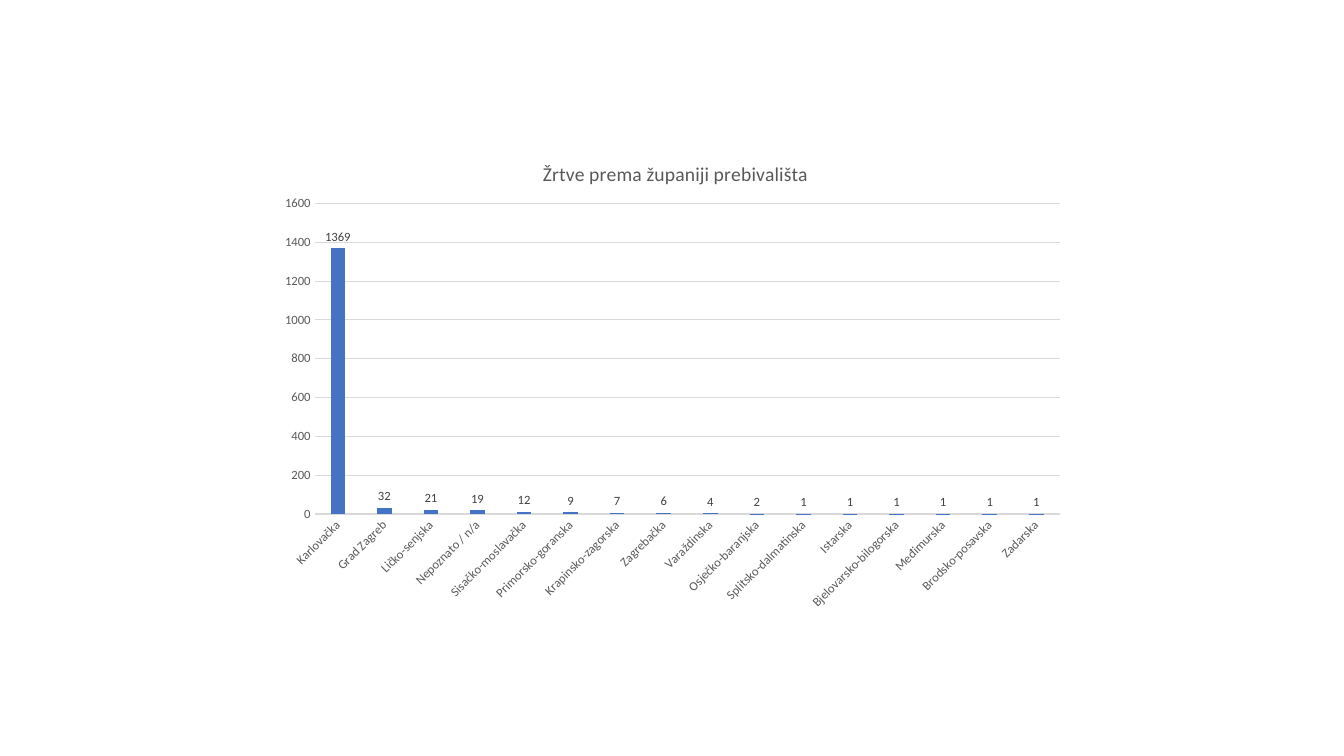
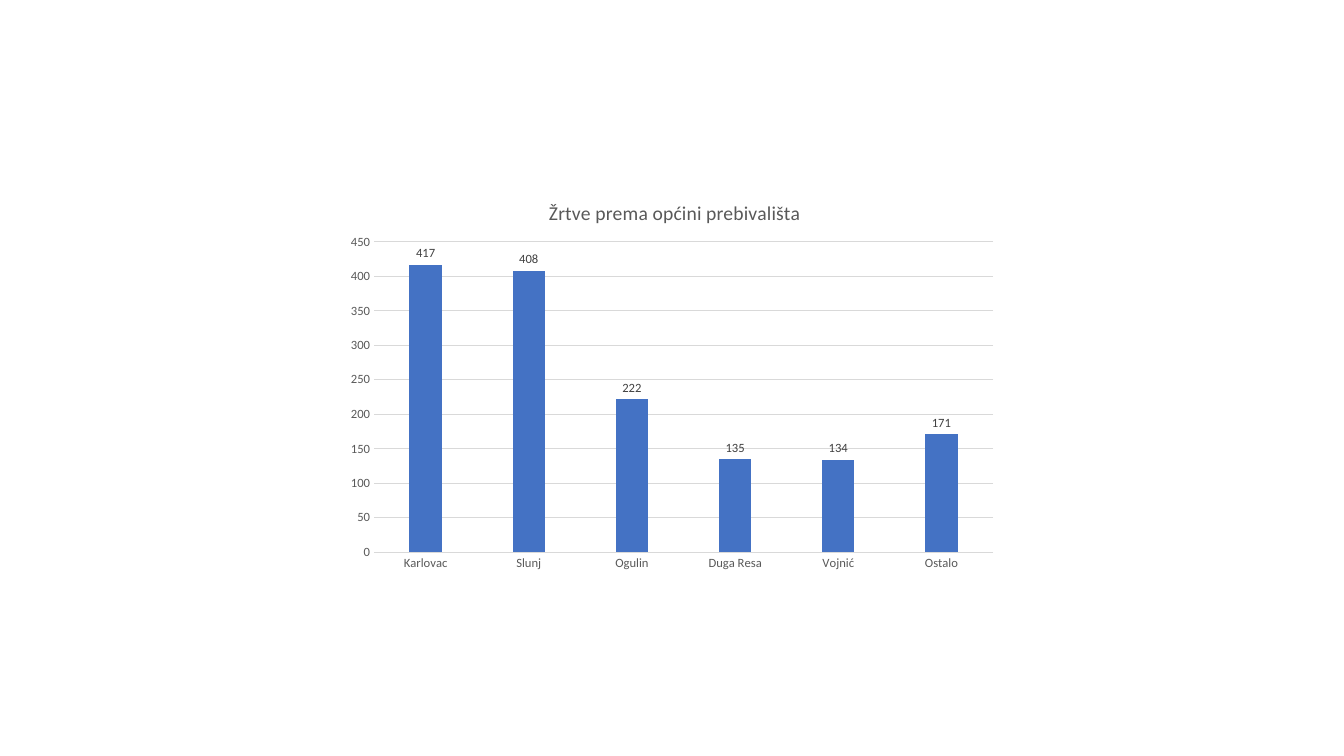
from lxml.etree import SubElement
from pptx import Presentation
from pptx.chart.data import CategoryChartData
from pptx.dml.color import RGBColor
from pptx.enum.chart import XL_CHART_TYPE, XL_LABEL_POSITION, XL_TICK_MARK
from pptx.oxml.ns import qn
from pptx.oxml.xmlchemy import OxmlElement
from pptx.util import Pt

PX = 9144  # EMU: 100 px to the inch
FONT = "Calibri"
BAR_BLUE = RGBColor(0x44, 0x72, 0xC4)
TEXT_GREY = RGBColor(0x59, 0x59, 0x59)
LABEL_GREY = RGBColor(0x40, 0x40, 0x40)
RULE_GREY = RGBColor(0xD9, 0xD9, 0xD9)

COUNTIES = {
    "Karlovačka": 1369,
    "Grad Zagreb": 32,
    "Ličko-senjska": 21,
    "Nepoznato / n/a": 19,
    "Sisačko-moslavačka": 12,
    "Primorsko-goranska": 9,
    "Krapinsko-zagorska": 7,
    "Zagrebačka": 6,
    "Varaždinska": 4,
    "Osječko-baranjska": 2,
    "Splitsko-dalmatinska": 1,
    "Istarska": 1,
    "Bjelovarsko-bilogorska": 1,
    "Međimurska": 1,
    "Brodsko-posavska": 1,
    "Zadarska": 1,
}
MUNICIPALITIES = {
    "Karlovac": 417,
    "Slunj": 408,
    "Ogulin": 222,
    "Duga Resa": 135,
    "Vojnić": 134,
    "Ostalo": 171,
}


def style_font(font, size, color):
    font.name = FONT
    font.size = Pt(size)
    font.bold = False
    font.color.rgb = color


def style_line(line):
    line.color.rgb = RULE_GREY
    line.width = Pt(0.75)


def manual_layout(frame, place, inner=False):
    """Layout element for a place (left, top[, width, height]) in slide px."""
    left, top, width, height = frame
    layout = OxmlElement("c:layout")
    manual = SubElement(layout, qn("c:manualLayout"))
    settings = [("layoutTarget", "inner")] if inner else []
    settings += [("xMode", "edge"), ("yMode", "edge")]
    fractions = [(place[0] - left) / width, (place[1] - top) / height]
    if inner:
        fractions += [place[2] / width, place[3] / height]
    settings += [(name, f"{value:.4f}") for name, value in zip("xywh", fractions)]
    for name, value in settings:
        SubElement(manual, qn(f"c:{name}")).set("val", value)
    return layout


def drop_layout(parent):
    for layout in parent.findall(qn("c:layout")):
        parent.remove(layout)


def add_title(chart, text, frame, place):
    title = chart.chart_title
    title.text_frame.text = text
    style_font(title.text_frame.paragraphs[0].font, 14, TEXT_GREY)
    element = title.element
    drop_layout(element)
    element.find(qn("c:tx")).addnext(manual_layout(frame, place))
    title.include_in_layout = False


def style_axes(chart, maximum, step, label_angle):
    for axis in (chart.category_axis, chart.value_axis):
        axis.major_tick_mark = axis.minor_tick_mark = XL_TICK_MARK.NONE
        style_font(axis.tick_labels.font, 9, TEXT_GREY)
    names, values = chart.category_axis, chart.value_axis
    style_line(names.format.line)
    body = names._element.xpath("c:txPr/a:bodyPr")[0]
    body.set("rot", str(label_angle * 60000))
    body.set("vert", "horz")
    values.minimum_scale, values.maximum_scale = 0, maximum
    values.major_unit = step
    values.format.line.fill.background()
    values.has_major_gridlines = True
    style_line(values.major_gridlines.format.line)


def style_bars(plot):
    plot.gap_width = 219
    plot.overlap = -27
    plot.vary_by_categories = False
    fill = plot.series[0].format.fill
    fill.solid()
    fill.fore_color.rgb = BAR_BLUE
    plot.has_data_labels = True
    labels = plot.data_labels
    labels.show_value = True
    labels.position = XL_LABEL_POSITION.OUTSIDE_END
    style_font(labels.font, 9, LABEL_GREY)


def add_column_slide(deck, title, counts, frame, title_at, plot_at,
                     maximum, step, label_angle=0):
    page = deck.slides.add_slide(deck.slide_layouts[6])
    data = CategoryChartData()
    data.categories = list(counts)
    data.add_series("Series 1", list(counts.values()))
    chart = page.shapes.add_chart(
        XL_CHART_TYPE.COLUMN_CLUSTERED, *(length * PX for length in frame), data
    ).chart
    chart.has_legend = False
    chart.font.name = FONT
    chart.font.size = Pt(10)
    add_title(chart, title, frame, title_at)
    style_axes(chart, maximum, step, label_angle)
    style_bars(chart.plots[0])
    plot_area = chart.element.find(qn("c:chart")).find(qn("c:plotArea"))
    drop_layout(plot_area)
    plot_area.insert(0, manual_layout(frame, plot_at, inner=True))


def main():
    deck = Presentation()
    deck.slide_width, deck.slide_height = 1333 * PX, 750 * PX
    add_column_slide(
        deck, "Žrtve prema županiji prebivališta", COUNTIES,
        frame=(266, 135, 801, 480), title_at=(535, 155),
        plot_at=(312, 202, 739, 308), maximum=1600, step=200, label_angle=-45,
    )
    add_column_slide(
        deck, "Žrtve prema općini prebivališta", MUNICIPALITIES,
        frame=(335, 176, 664, 398), title_at=(541, 194),
        plot_at=(371, 240, 614, 308), maximum=450, step=50,
    )
    deck.save("out.pptx")


if __name__ == "__main__":
    main()
